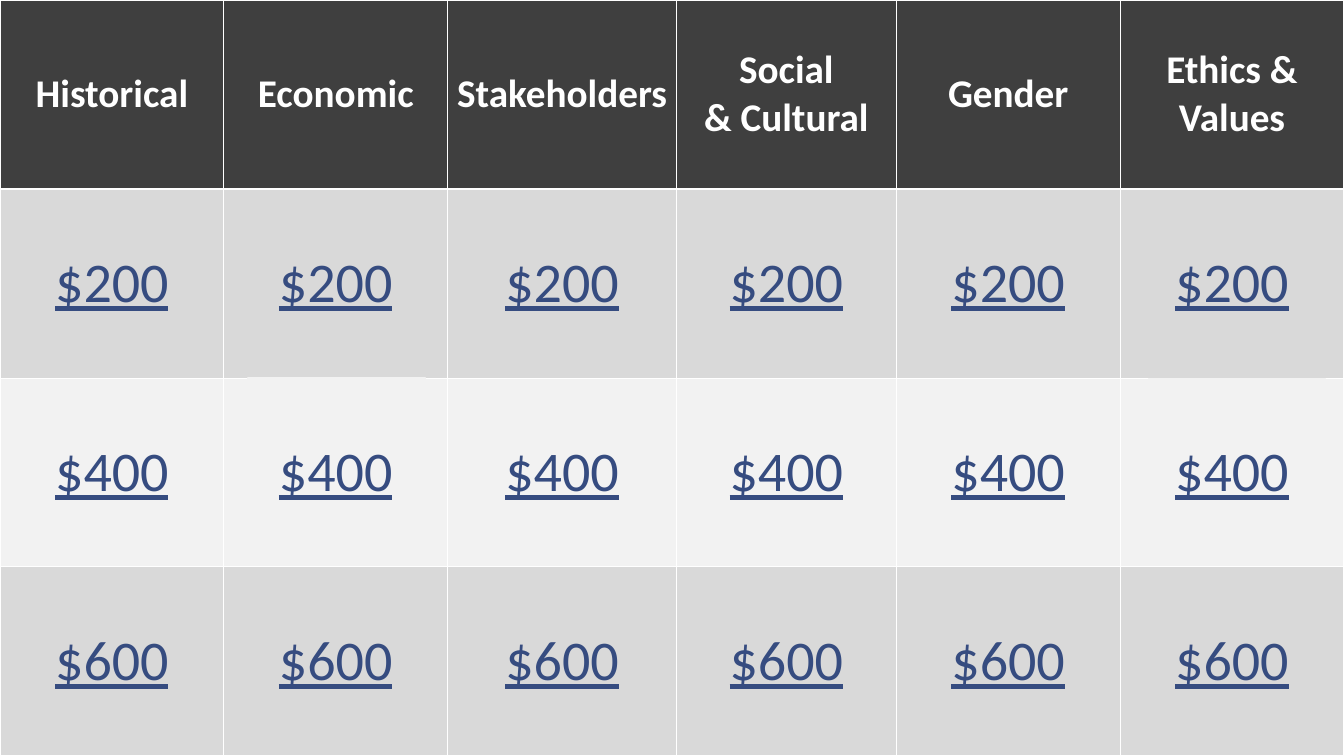
from lxml import etree
from pptx import Presentation
from pptx.dml.color import RGBColor
from pptx.enum.shapes import MSO_SHAPE
from pptx.enum.text import MSO_ANCHOR, PP_ALIGN
from pptx.oxml.ns import qn
from pptx.util import Inches, Pt

RECTANGLE = MSO_SHAPE.RECTANGLE
MIDDLE = MSO_ANCHOR.MIDDLE
CENTER = PP_ALIGN.CENTER

# Content
CATEGORIES = ["Historical", "Economic", "Stakeholders", "Social\n& Cultural",
              "Gender", "Ethics & Values"]
PRIZES = ["$200", "$400", "$600"]
COLORS = {"header": "3F3F3F", "white": "FFFFFF", "link": "364C80",
          "dark": "D9D9D9", "light": "F2F2F2"}
BANDS = ["dark", "light", "dark"]

# Layout, in inches
WIDTH, HEIGHT = 13.33, 7.5
COLUMN_WIDTHS = [2.22, 2.22, 2.27, 2.18, 2.22, 2.22]
FRAME_WIDTH = 1.76
# Answer frames per strip: line colour, then (left, top, height)
FRAME_STRIPS = [
    ("dark", [(11.39, 5.71, 0.41), (9.13, 5.73, 0.43), (6.99, 5.72, 0.43),
              (4.74, 5.74, 0.43), (2.48, 5.75, 0.43), (0.34, 5.71, 0.54)]),
    ("dark", [(11.33, 1.95, 0.55), (9.19, 1.99, 0.41), (6.96, 1.91, 0.48),
              (4.74, 1.93, 0.41), (2.48, 1.91, 0.52), (0.25, 1.98, 0.39)]),
    ("light", [(0.2, 3.91, 0.39), (4.76, 3.83, 0.43), (6.95, 3.82, 0.45),
               (9.11, 3.79, 0.38), (11.34, 3.82, 0.46), (2.38, 3.78, 0.43)]),
    ("light", [(11.39, 3.76, 0.55), (9.12, 3.77, 0.55), (6.86, 3.77, 0.55),
               (4.63, 3.79, 0.55), (2.46, 3.75, 0.55), (0.27, 3.8, 0.55)]),
]


def color(name):
    return RGBColor.from_string(COLORS[name])


def set_borders(cell, top, bottom):
    properties = cell._tc.get_or_add_tcPr()
    for side, points in (("L", 0.75), ("R", 0.75), ("T", top), ("B", bottom)):
        line = etree.SubElement(properties, qn(f"a:ln{side}"), w=str(Pt(points)))
        fill = etree.SubElement(line, qn("a:solidFill"))
        etree.SubElement(fill, qn("a:srgbClr"), val=COLORS["white"])


def fill_cell(cell, text, row):
    is_header = row == 0
    set_borders(cell, 2.21 if row == 1 else 0.75, 2.21 if is_header else 0.75)
    cell.fill.solid()
    cell.fill.fore_color.rgb = color("header" if is_header else BANDS[row - 1])
    cell.vertical_anchor = MIDDLE
    cell.margin_left = cell.margin_right = Inches(0.07)
    cell.margin_top = cell.margin_bottom = Inches(0.03)
    cell.text_frame.text = text
    for para in cell.text_frame.paragraphs:
        para.alignment = CENTER
        font = para.font
        font.name = "Calibri"
        font.size = Pt(28 if is_header else 40)
        font.bold = is_header
        font.underline = not is_header
        font.color.rgb = color("white" if is_header else "link")


deck = Presentation()
deck.slide_width, deck.slide_height = Inches(WIDTH), Inches(HEIGHT)
page = deck.slides.add_slide(deck.slide_layouts[6])

# Game board
rows = [CATEGORIES] + [[prize] * len(CATEGORIES) for prize in PRIZES]
board = page.shapes.add_table(len(rows), len(CATEGORIES), 0, 0,
                              Inches(WIDTH), Inches(HEIGHT)).table
for column, width in zip(board.columns, COLUMN_WIDTHS):
    column.width = Inches(width)
for row, texts in enumerate(rows):
    for column, text in enumerate(texts):
        fill_cell(board.cell(row, column), text, row)

# Answer frames, outlined in the colour of their band
for band, frames in FRAME_STRIPS:
    for left, top, height in frames:
        frame = page.shapes.add_shape(RECTANGLE, Inches(left), Inches(top),
                                      Inches(FRAME_WIDTH), Inches(height))
        frame.shadow.inherit = False
        frame.fill.background()
        frame.line.color.rgb = color(band)
        frame.line.width = Pt(1)

deck.save("out.pptx")
